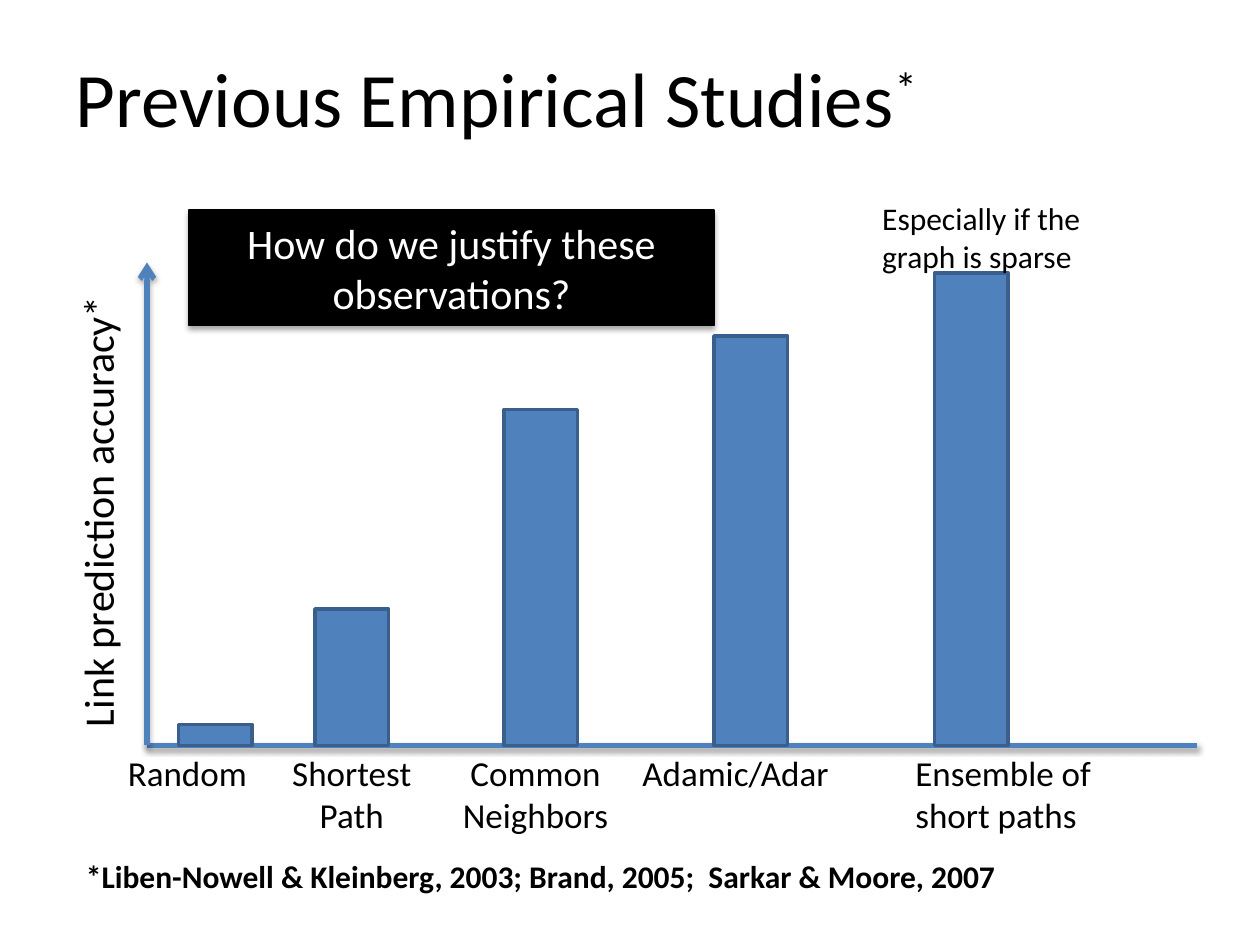
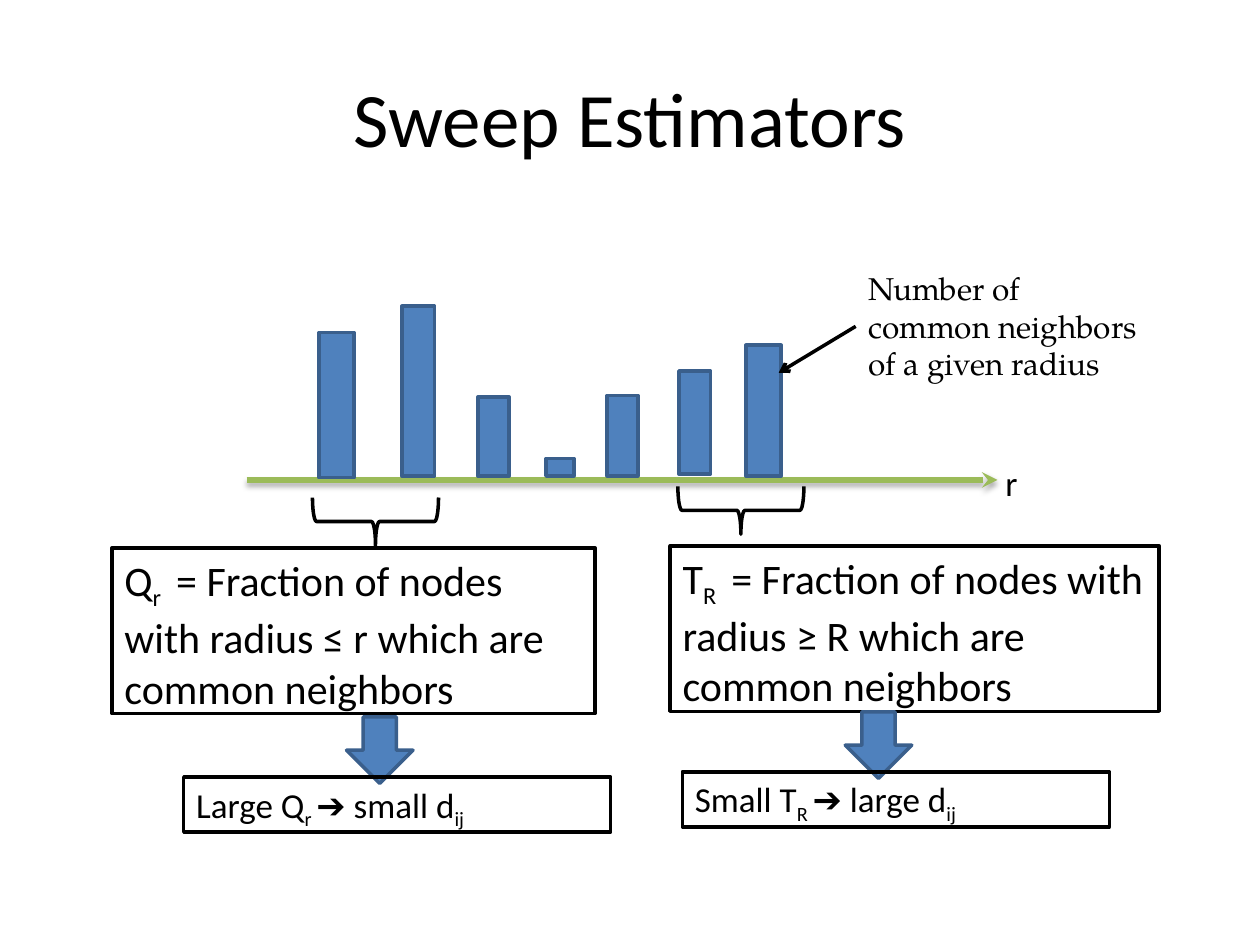
from lxml import etree
from pptx import Presentation
from pptx.dml.color import RGBColor
from pptx.enum.shapes import MSO_CONNECTOR, MSO_SHAPE
from pptx.enum.text import MSO_ANCHOR, MSO_AUTO_SIZE, PP_ALIGN
from pptx.oxml.ns import qn
from pptx.util import Pt

RECT, BRACE, DOWN = MSO_SHAPE.RECTANGLE, MSO_SHAPE.LEFT_BRACE, MSO_SHAPE.DOWN_ARROW
LEFT, MID = PP_ALIGN.LEFT, PP_ALIGN.CENTER
TOP, CENTER = MSO_ANCHOR.TOP, MSO_ANCHOR.MIDDLE
BLUE, EDGE, GREEN = "4F81BD", "3A5F8C", "9BBB59"
BLACK, WHITE = "000000", "FFFFFF"
FONT, SERIF = "Calibri", "TeX Gyre Pagella"
SUP, SUB = 30, -25

# Slide 1: bar left and top, label, label left and width, alignment
BASE, BAR = 426, 42
METHODS = [
    (102, 414, "Random", 66, 102, LEFT),
    (180, 348, "Shortest Path", 150, 102, MID),
    (288, 234, "Common Neighbors", 240, 132, MID),
    (408, 192, "Adamic/Adar", 360, 144, LEFT),
    (534, 156, "Ensemble of short paths", 516, 144, LEFT),
]
CITE = "*Liben-Nowell & Kleinberg, 2003; Brand, 2005;  Sarkar & Moore, 2007"

# Slide 2: bar left, width, top, bottom
RADII = [
    (182.2, 20.2, 190, 273), (229.7, 18.7, 175, 272), (273, 18, 227, 272),
    (312, 16, 262, 272), (347, 17.5, 226, 272), (388, 18, 212, 271),
    (426.2, 20.2, 197.3, 272),
]
# Definition box, its runs, brace, arrow spot, result spot, result runs
SWEEPS = [
    ((64, 313.2, 276, 94.5),
     [("Q", 0), ("r ", SUB),
      (" = Fraction of nodes with radius ≤ r which are common neighbors", 0)],
     (200.9, 262), (198, 409.7), (105, 444),
     [("Large Q", 0), ("r ", SUB), ("➔ small d", 0), ("ij", SUB)]),
    ((383, 312, 279.5, 94.5),
     [("T", 0), ("R ", SUB),
      (" = Fraction of nodes with radius ≥ R which are common neighbors", 0)],
     (409.7, 255.6), (483, 406.8), (390, 441),
     [("Small T", 0), ("R ", SUB), ("➔ large d", 0), ("ij", SUB)]),
]


def color(code):
    return RGBColor.from_string(code)


def place(item, box):
    item.left, item.top, item.width, item.height = map(Pt, box)


def write(item, runs, size, align=LEFT, anchor=TOP, ink=BLACK, font=FONT, bold=False):
    """Fill a shape with one paragraph; runs is a string or (text, baseline) pairs."""
    frame = item.text_frame
    frame.word_wrap = True
    frame.auto_size = MSO_AUTO_SIZE.NONE
    frame.vertical_anchor = anchor
    para = frame.paragraphs[0]
    para.alignment = align
    for text, base in [(runs, 0)] if isinstance(runs, str) else runs:
        run = para.add_run()
        run.text = text
        run.font.size, run.font.name, run.font.bold = Pt(size), font, bold
        run.font.color.rgb = color(ink)
        if base:
            run.font._element.set("baseline", str(base * 1000))


def shade(item, on):
    """Replace the theme shadow with a soft drop shadow, or with none."""
    effects = etree.SubElement(item._element.spPr, qn("a:effectLst"))
    if on:
        drop = etree.SubElement(effects, qn("a:outerShdw"), blurRad=str(Pt(3.1)),
                                dist=str(Pt(1.8)), dir="5400000", rotWithShape="0")
        tint = etree.SubElement(drop, qn("a:srgbClr"), val=BLACK)
        etree.SubElement(tint, qn("a:alpha"), val="35000")


def shape(shapes, kind, box, fill=None, line=BLACK, width=2, shadow=False):
    item = shapes.add_shape(kind, *map(Pt, box))
    if fill:
        item.fill.solid()
        item.fill.fore_color.rgb = color(fill)
    else:
        item.fill.background()
    item.line.color.rgb = color(line)
    item.line.width = Pt(width)
    shade(item, shadow)
    return item


def label(shapes, box, runs, size, **style):
    item = shapes.add_textbox(*map(Pt, box))
    write(item, runs, size, **style)
    return item


def rule(shapes, ends, ink, width, head=None, shadow=False):
    item = shapes.add_connector(MSO_CONNECTOR.STRAIGHT, *map(Pt, ends))
    item.line.color.rgb = color(ink)
    item.line.width = Pt(width)
    if head:
        etree.SubElement(item.line._get_or_add_ln(), qn("a:tailEnd"), type=head)
    shade(item, shadow)


def start(deck, runs, box, align):
    """Add a title-only slide and return its shapes."""
    shapes = deck.slides.add_slide(deck.slide_layouts[5]).shapes
    place(shapes.title, box)
    write(shapes.title, runs, 44, align, CENTER)
    return shapes


def studies(deck):
    shapes = start(deck, [("Previous Empirical Studies", 0), ("*", SUP)],
                   (36, 18.7, 660, 72.7), LEFT)
    rule(shapes, (84, BASE, 684, BASE), BLUE, 3, shadow=True)
    for left, top, name, spot, wide, align in METHODS:
        shape(shapes, RECT, (left, top, BAR, BASE - top), BLUE, EDGE)
        tall = 55.5 if " " in name else 31.5
        label(shapes, (spot, BASE, wide, tall), name, 20, align=align)
    rule(shapes, (84, BASE, 84, 150), BLUE, 3, "arrow", True)
    axis = label(shapes, (-105, 244, 321, 36), "Link prediction accuracy*", 24)
    axis.rotation = 270
    label(shapes, (42, 486, 624, 29), CITE, 18, bold=True)
    ask = shape(shapes, RECT, (108, 120, 300, 66), BLACK, BLACK, 0.75, True)
    write(ask, "How do we justify these observations?", 24, MID, CENTER, WHITE)
    label(shapes, (497, 110, 147.5, 51), "Especially if the graph is sparse", 18)


def sweep(deck):
    shapes = start(deck, "Sweep Estimators", (36, 21.6, 648, 90), MID)
    rule(shapes, (141, 274.3, 570, 274.3), GREEN, 3, "stealth", True)
    for left, wide, top, low in RADII:
        shape(shapes, RECT, (left, top, wide, low - top), BLUE, EDGE)
    for box, runs, brace, arrow, spot, result in SWEEPS:
        write(shape(shapes, RECT, box), runs, 24)
        shape(shapes, BRACE, (*brace, 27.4, 72)).rotation = 270
        group = shapes.add_group_shape().shapes
        shape(group, DOWN, (*arrow, 38, 38), BLUE, EDGE)
        write(shape(group, RECT, (*spot, 244, 31.5)), result, 20)
    label(shapes, (489, 150, 171.5, 72.7),
          "Number of common neighbors of a given radius", 18, font=SERIF)
    rule(shapes, (489, 186.5, 445, 213), BLACK, 2, "arrow")
    label(shapes, (567.4, 260, 35, 31.5), "r", 20)


def main():
    deck = Presentation()
    deck.slide_width, deck.slide_height = Pt(720), Pt(540)
    studies(deck)
    sweep(deck)
    deck.save("out.pptx")


if __name__ == "__main__":
    main()
